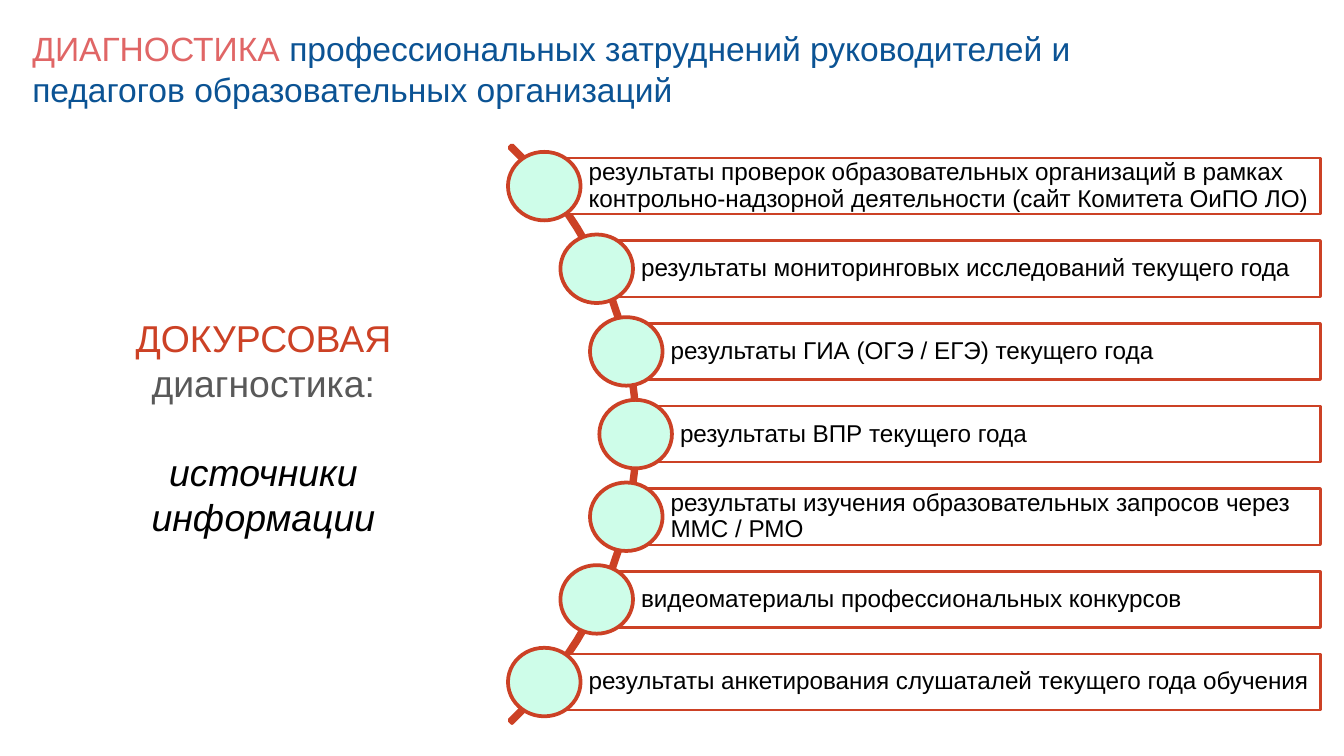
"""Build the slide on information sources for pre-course diagnostics."""
from pptx import Presentation
from pptx.dml.color import RGBColor
from pptx.enum.shapes import MSO_SHAPE
from pptx.enum.text import MSO_ANCHOR, MSO_AUTO_SIZE, PP_ALIGN
from pptx.util import Inches, Pt

RECTANGLE, OVAL = MSO_SHAPE.RECTANGLE, MSO_SHAPE.OVAL
MIDDLE, BOTTOM = MSO_ANCHOR.MIDDLE, MSO_ANCHOR.BOTTOM
LEFT, CENTER = PP_ALIGN.LEFT, PP_ALIGN.CENTER
NO_AUTOFIT = MSO_AUTO_SIZE.NONE

COLORS = {
    "coral": "E06666",
    "blue": "0B5394",
    "red": "CC4125",
    "gray": "595959",
    "black": "000000",
    "white": "FFFFFF",
    "mint": "CEFDE9",
}

SOURCES = [
    "результаты проверок образовательных организаций в рамках "
    "контрольно-надзорной деятельности (сайт Комитета ОиПО ЛО)",
    "результаты мониторинговых исследований текущего года",
    "результаты ГИА (ОГЭ / ЕГЭ) текущего года",
    "результаты ВПР текущего года",
    "результаты изучения образовательных запросов через ММС / РМО",
    "видеоматериалы профессиональных конкурсов",
    "результаты анкетирования слушаталей текущего года обучения",
]
HALF_LEFTS = [4.05, 4.44, 4.66, 4.73]
BOX_LEFTS = HALF_LEFTS + HALF_LEFTS[-2::-1]
BOX_RIGHT, BOX_HEIGHT = 9.82, 0.41
FIRST_TOP, LAST_TOP = 1.18, 4.87
PITCH = (LAST_TOP - FIRST_TOP) / (len(SOURCES) - 1)
CIRCLE_WIDTH, CIRCLE_HEIGHT = 0.54, 0.51

OUTER_CURVE = [(3.81, 1.08), (5.06, 2.27), (5.06, 4.19), (3.81, 5.38)]
INNER_CURVE = [(3.79, 5.36), (5.03, 4.18), (5.03, 2.28), (3.79, 1.1)]
CURVE_STEPS = 32

BLOCK_FRAME = {
    "word_wrap": True,
    "auto_size": NO_AUTOFIT,
    "vertical_anchor": BOTTOM,
    "margin_left": Inches(0.1),
    "margin_right": Inches(0.1),
    "margin_top": Inches(0.1),
    "margin_bottom": Inches(0.1),
}
LABEL_FRAME = {
    "word_wrap": True,
    "auto_size": NO_AUTOFIT,
    "vertical_anchor": MIDDLE,
    "margin_left": Inches(0.33),
    "margin_right": Inches(0.03),
    "margin_top": Inches(0.03),
    "margin_bottom": Inches(0.03),
}
TITLE_PARAGRAPH = {"alignment": LEFT, "line_spacing": 1.0, "space_before": Pt(0)}
CAPTION_PARAGRAPH = {"alignment": CENTER, "line_spacing": 1.0}
LABEL_PARAGRAPH = {"alignment": LEFT, "line_spacing": 0.9}


def rgb(color):
    return RGBColor.from_string(COLORS[color])


def apply_format(target, values):
    for name, value in values.items():
        setattr(target, name, value)


def place(shape, left, top, width, height):
    lengths = zip(("left", "top", "width", "height"), (left, top, width, height))
    apply_format(shape, {name: Inches(value) for name, value in lengths})


def add_run(paragraph, text, size, color, italic=None):
    run = paragraph.add_run()
    run.text = text
    apply_format(run.font, {"name": "Arial", "size": Pt(size), "italic": italic})
    run.font.color.rgb = rgb(color)


def style_shape(shape, fill, line_width):
    shape.shadow.inherit = False
    if fill:
        shape.fill.solid()
        shape.fill.fore_color.rgb = rgb(fill)
    else:
        shape.fill.background()
    shape.line.color.rgb = rgb("red")
    shape.line.width = Pt(line_width)


def add_outlined(group, kind, left, top, width, height, fill, line_width):
    lengths = [Inches(value) for value in (left, top, width, height)]
    shape = group.shapes.add_shape(kind, *lengths)
    style_shape(shape, fill, line_width)
    return shape


def add_title(slide):
    title = slide.shapes.title
    place(title, 0.14, 0.15, 8.16, 0.76)
    apply_format(title.text_frame, BLOCK_FRAME)
    paragraph = title.text_frame.paragraphs[0]
    apply_format(paragraph, TITLE_PARAGRAPH)
    add_run(paragraph, "ДИАГНОСТИКА ", 18, "coral")
    add_run(
        paragraph,
        "профессиональных затруднений руководителей и педагогов "
        "образовательных организаций",
        18,
        "blue",
    )


def add_caption(slide):
    lengths = [Inches(value) for value in (0.9, 2.19, 2.12, 1.92)]
    text_frame = slide.shapes.add_textbox(*lengths).text_frame
    apply_format(text_frame, BLOCK_FRAME)
    lines = [
        ("ДОКУРСОВАЯ", "red", None, 0),
        ("диагностика:", "gray", None, 0),
        ("источники информации", "black", True, 24),
    ]
    for index, (text, color, italic, gap) in enumerate(lines):
        paragraph = text_frame.add_paragraph() if index else text_frame.paragraphs[0]
        apply_format(paragraph, CAPTION_PARAGRAPH)
        paragraph.space_before = Pt(gap)
        add_run(paragraph, text, 20, color, italic)


def curve_points(controls):
    points = []
    for step in range(CURVE_STEPS + 1):
        t = step / CURVE_STEPS
        weights = ((1 - t) ** 3, 3 * t * (1 - t) ** 2, 3 * t**2 * (1 - t), t**3)
        points.append(
            tuple(
                Inches(sum(weight * value for weight, value in zip(weights, axis)))
                for axis in zip(*controls)
            )
        )
    return points


def add_arc(group):
    start, *rest = curve_points(OUTER_CURVE) + curve_points(INNER_CURVE)
    builder = group.shapes.build_freeform(*start)
    builder.add_line_segments(rest, close=True)
    style_shape(builder.convert_to_shape(), None, 2)


def add_source(group, text, left, top):
    box = (left, top, BOX_RIGHT - left, BOX_HEIGHT)
    add_outlined(group, RECTANGLE, *box, None, 2)
    label = add_outlined(group, RECTANGLE, *box, "white", 0.75)
    apply_format(label.text_frame, LABEL_FRAME)
    paragraph = label.text_frame.paragraphs[0]
    apply_format(paragraph, LABEL_PARAGRAPH)
    add_run(paragraph, text, 13, "black")
    circle = (left - CIRCLE_WIDTH / 2, top + (BOX_HEIGHT - CIRCLE_HEIGHT) / 2)
    add_outlined(group, OVAL, *circle, CIRCLE_WIDTH, CIRCLE_HEIGHT, "mint", 2)


def main():
    presentation = Presentation()
    presentation.slide_width = Inches(10)
    presentation.slide_height = Inches(10 * 9 / 16)
    slide = presentation.slides.add_slide(presentation.slide_layouts[5])
    add_title(slide)
    add_caption(slide)
    group = slide.shapes.add_group_shape()
    add_arc(group)
    for index, (text, left) in enumerate(zip(SOURCES, BOX_LEFTS)):
        add_source(group, text, left, FIRST_TOP + index * PITCH)
    presentation.save("out.pptx")


if __name__ == "__main__":
    main()
